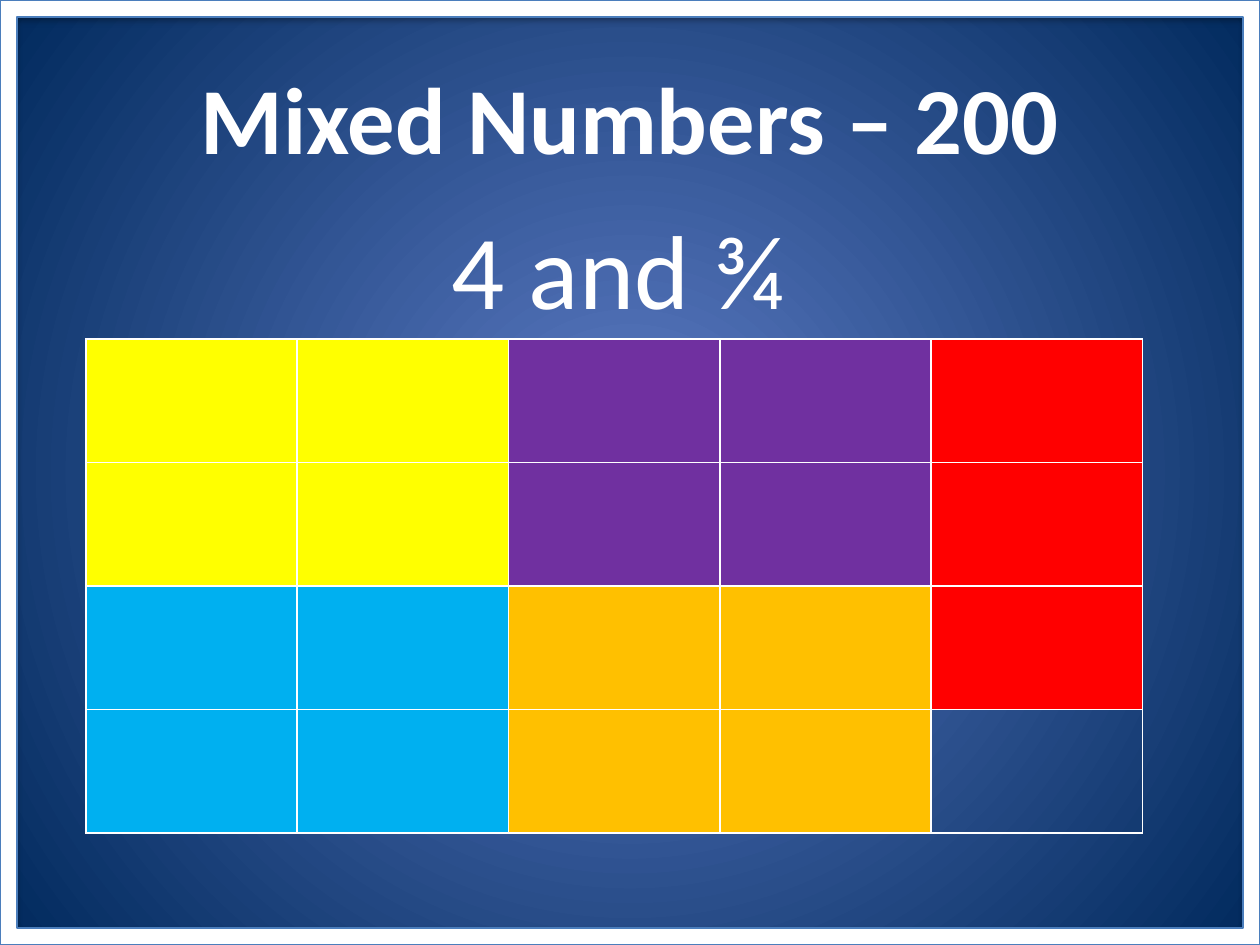
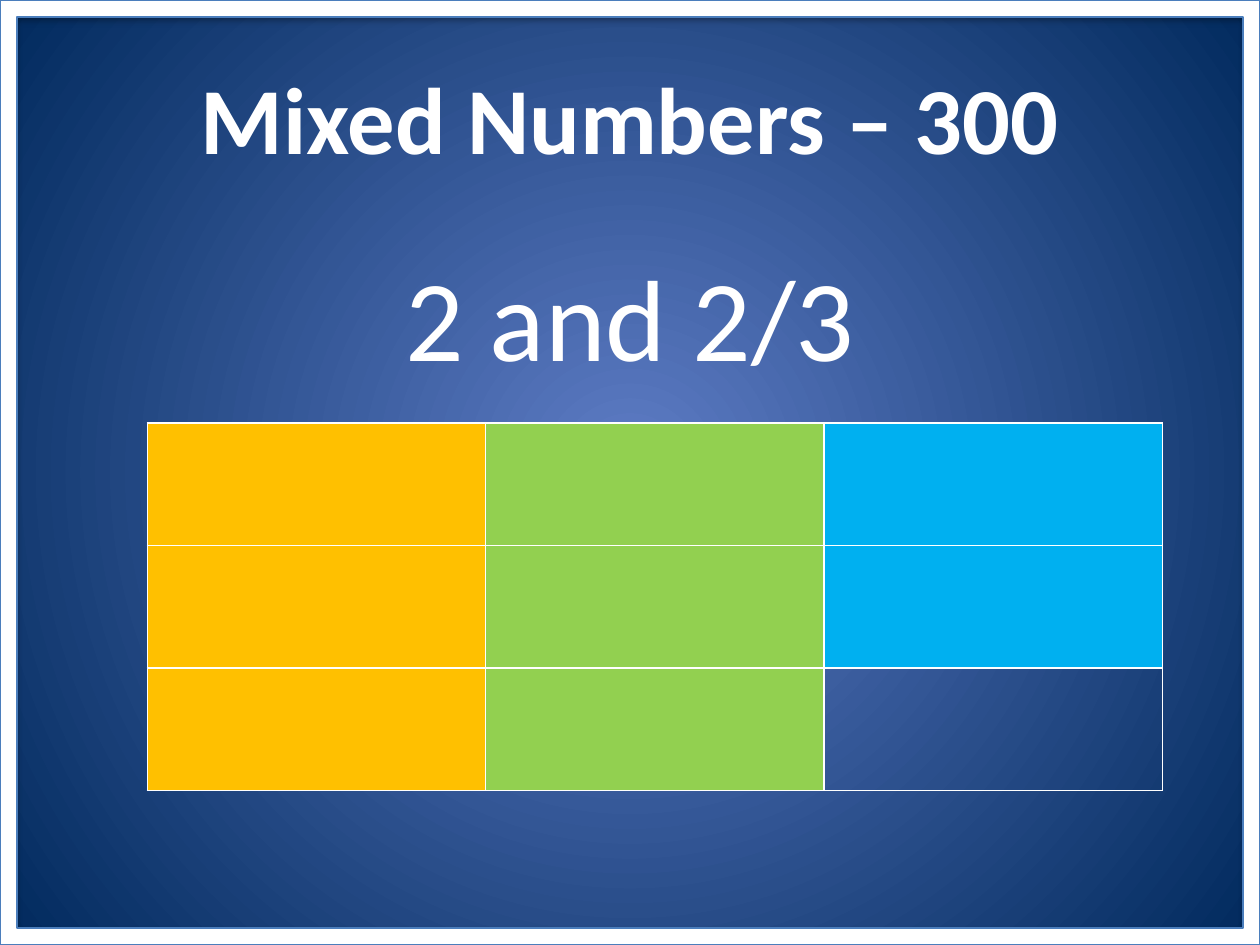
from lxml import etree
from pptx import Presentation
from pptx import util as u
from pptx.dml import color
from pptx.enum import shapes, text
from pptx.oxml import ns

WIDE, HIGH = u.Cm(25.4), u.Cm(19.05)
WHITE, EDGE, GLOW, NAVY = "FFFFFF", "4B7EBC", "5E7CC5", "00295C"
HUES = {"Y": "FFFF00", "P": "7030A0", "R": "FF0000",
        "B": "00B0F0", "O": "FFC000", "G": "92D050"}
TITLE = {"size": u.Pt(54), "bold": True}


def rgb(code):
    """Turn a hex string into a colour."""
    return color.RGBColor.from_string(code)


def put(item, form):
    """Set each attribute of a format dict on an item."""
    for name, value in form.items():
        setattr(item, name, value)


def sub(node, tag, **attrs):
    """Add a drawing element with attributes below a node."""
    return etree.SubElement(node, ns.qn(tag), {k: str(v) for k, v in attrs.items()})


def paint(slide):
    """Fill the background with a round gradient."""
    fill = slide.background.fill
    fill.gradient()
    for stop, code in zip(fill.gradient_stops, (GLOW, NAVY)):
        stop.color.rgb = rgb(code)
    grad = slide.element.find(".//" + ns.qn("a:gradFill"))
    grad.remove(grad.find(ns.qn("a:lin")))
    ring = sub(grad, "a:path", path="circle")
    sub(ring, "a:fillToRect", l=50000, t=50000, r=50000, b=50000)


def frame(slide):
    """Draw the white frame with its soft shadow."""
    edge = slide.shapes.add_shape(shapes.MSO_SHAPE.FRAME, 0, 0, WIDE, HIGH)
    edge.adjustments[0] = 0.018
    edge.fill.solid()
    edge.fill.fore_color.rgb = rgb(WHITE)
    edge.line.color.rgb = rgb(EDGE)
    edge.line.width = u.Pt(0.75)
    edge.shadow.inherit = False
    glow = edge.element.spPr.find(ns.qn("a:effectLst"))
    shade = sub(glow, "a:outerShdw", blurRad=u.Pt(3.1), dist=u.Pt(1.8),
                dir=5400000, rotWithShape=0)
    sub(sub(shade, "a:srgbClr", val="000000"), "a:alpha", val=35000)


def label(slide, words, top, high, form, anchor=text.MSO_ANCHOR.TOP):
    """Place a centred white line of text across the slide."""
    box = slide.shapes.add_textbox(u.Cm(1.27), u.Cm(top), u.Cm(22.86), u.Cm(high))
    put(box.text_frame, {"word_wrap": True, "vertical_anchor": anchor})
    para = box.text_frame.paragraphs[0]
    para.alignment = text.PP_ALIGN.CENTER
    run = para.add_run()
    run.text = words
    put(run.font, {"name": "Calibri", **form})
    run.font.color.rgb = rgb(WHITE)


def border(cell):
    """Give a cell thin white lines on all sides."""
    props = cell._tc.get_or_add_tcPr()
    for side in ("a:lnL", "a:lnR", "a:lnT", "a:lnB"):
        line = sub(props, side, w=u.Pt(1))
        sub(sub(line, "a:solidFill"), "a:srgbClr", val=WHITE)


def grid(slide, rows, left, top, wide, high):
    """Build a table of coloured cells, one letter a cell."""
    count = len(rows[0])
    table = slide.shapes.add_table(
        len(rows), count, u.Cm(left), u.Cm(top),
        u.Cm(wide * count), u.Cm(high * len(rows))).table
    put(table, {"first_row": False, "horz_banding": False})
    for col in table.columns:
        col.width = u.Cm(wide)
    for row in table.rows:
        row.height = u.Cm(high)
    for cell, key in zip(table.iter_cells(), "".join(rows)):
        border(cell)
        if key in HUES:
            cell.fill.solid()
            cell.fill.fore_color.rgb = rgb(HUES[key])
        else:
            cell.fill.background()


def page(deck, score):
    """Add a slide with the shared background, title and frame."""
    slide = deck.slides.add_slide(deck.slide_layouts[6])
    paint(slide)
    label(slide, f"Mixed Numbers – {score}", 0.76, 3.18, TITLE,
          text.MSO_ANCHOR.MIDDLE)
    frame(slide)
    return slide


def main():
    """Build both answer slides and save the deck."""
    deck = Presentation()
    put(deck, {"slide_width": WIDE, "slide_height": HIGH})

    slide = page(deck, 200)
    label(slide, "4 and ¾ ", 3.99, 2.82, {"size": u.Pt(60)})
    grid(slide, ["YYPPR", "YYPPR", "BBOOR", "BBOO-"], 1.73, 6.83, 4.26, 2.49)

    slide = page(deck, 300)
    label(slide, "2 and 2/3", 4.83, 3.07, {"size": u.Pt(66)})
    grid(slide, ["OGB", "OGB", "OG-"], 2.97, 8.53, 6.82, 2.47)

    deck.save("out.pptx")


if __name__ == "__main__":
    main()
